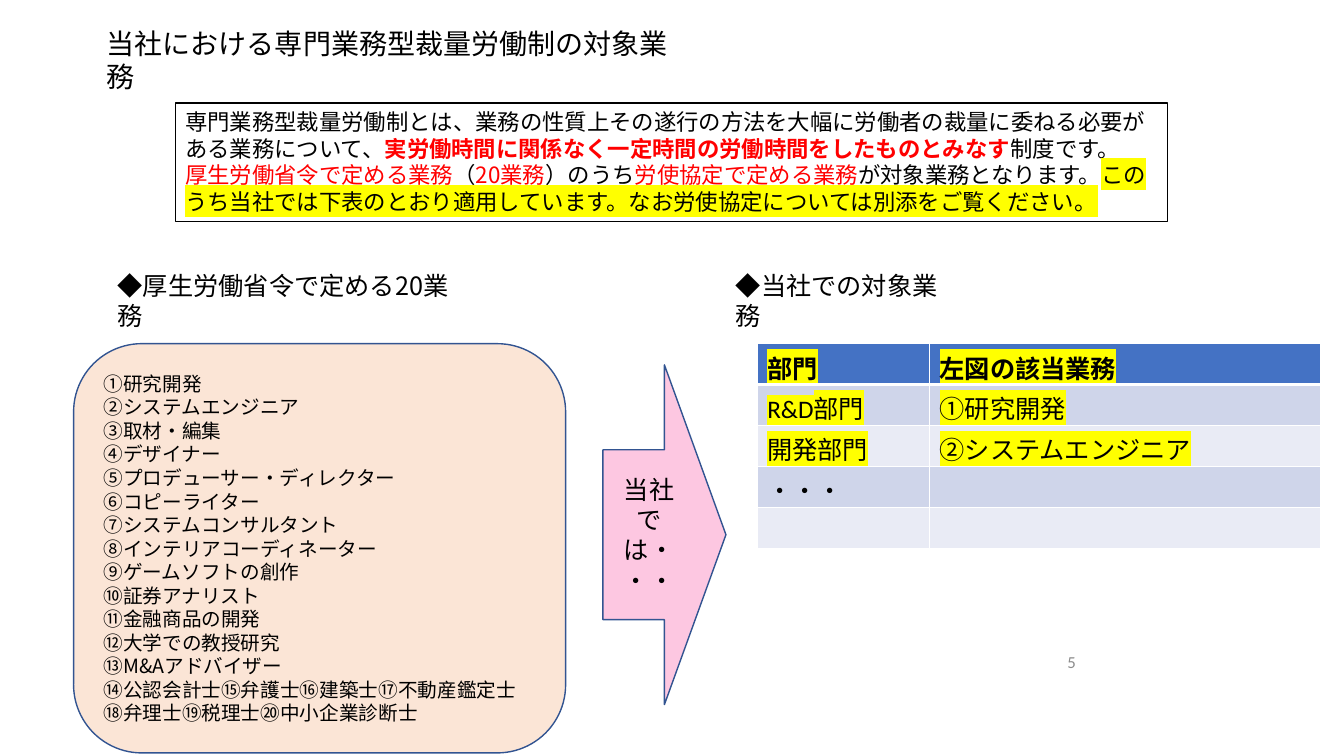
from lxml.etree import SubElement
from pptx import Presentation
from pptx.dml.color import RGBColor
from pptx.enum.shapes import MSO_SHAPE
from pptx.enum.text import MSO_ANCHOR, PP_ALIGN
from pptx.oxml.ns import qn
from pptx.util import Pt

PX = 9144
NOTO = "Noto Sans CJK JP"
CALIBRI = "Calibri"
BLACK = RGBColor(0, 0, 0)
RED = RGBColor(255, 0, 0)
GRAY = RGBColor(0x8C, 0x8C, 0x8C)
WHITE = RGBColor(255, 255, 255)
YELLOW = RGBColor(255, 255, 0)
NAVY = RGBColor(0x32, 0x54, 0x91)
PEACH = RGBColor(0xFB, 0xE5, 0xD6)
PINK = RGBColor(0xFD, 0xC7, 0xE1)
BLUE = RGBColor(0x44, 0x72, 0xC4)
BANDS = RGBColor(0xCF, 0xD5, 0xEA), RGBColor(0xE9, 0xEB, 0xF5)

JOBS = [
    "①研究開発", "②システムエンジニア", "③取材・編集", "④デザイナー",
    "⑤プロデューサー・ディレクター", "⑥コピーライター",
    "⑦システムコンサルタント", "⑧インテリアコーディネーター",
    "⑨ゲームソフトの創作", "⑩証券アナリスト", "⑪金融商品の開発",
    "⑫大学での教授研究", "⑬M&Aアドバイザー",
    "⑭公認会計士⑮弁護士⑯建築士⑰不動産鑑定士⑱弁理士⑲税理士⑳中小企業診断士",
]
HOT = {"color": RED}
MARK = {"mark": YELLOW}
INTRO = [
    [("専門業務型裁量労働制とは、業務の性質上その遂行の方法を大幅に労働者の裁量に委ねる必要がある業務について、", {}),
     ("実労働時間に関係なく一定時間の労働時間をしたものとみなす", {"color": RED, "bold": True}),
     ("制度です。", {})],
    [("厚生労働省令で定める業務", HOT), ("（", {}), ("20業務", HOT),
     ("）のうち", {}), ("労使協定で定める業務", HOT),
     ("が対象業務となります。", {}),
     ("このうち当社では下表のとおり適用しています。なお労使協定については別添をご覧ください。", MARK)],
]
ROWS = [
    ("部門", "左図の該当業務"),
    ("R&D部門", "①研究開発"),
    ("開発部門", "②システムエンジニア"),
    ("・・・", ""),
    ("", ""),
]


def scale(*box):
    return [n * PX for n in box]


def write(para, text, size=16, font=NOTO, color=BLACK, bold=False, mark=None):
    run = para.add_run()
    run.text = text
    run.font.size = Pt(size)
    run.font.bold = bold
    run.font.color.rgb = color
    props = run.font._element
    if mark:
        light = SubElement(props, qn("a:highlight"))
        SubElement(light, qn("a:srgbClr"), val=str(mark))
    run.font.name = font
    SubElement(props, qn("a:ea"), typeface=NOTO)


def fill_text(frame, paras, align=PP_ALIGN.LEFT, anchor=MSO_ANCHOR.TOP, **style):
    frame.word_wrap = True
    frame.vertical_anchor = anchor
    for i, runs in enumerate(paras):
        para = frame.add_paragraph() if i else frame.paragraphs[0]
        para.alignment = align
        for text, extra in runs:
            write(para, text, **{**style, **extra})


def label(slide, box, text, **style):
    area = slide.shapes.add_textbox(*scale(*box))
    fill_text(area.text_frame, [[(text, {})]], **style)


def panel(slide, kind, box, paras, fill=None, line=NAVY, **style):
    shape = slide.shapes.add_shape(kind, *scale(*box))
    shape.shadow.inherit = False
    if fill:
        shape.fill.solid()
        shape.fill.fore_color.rgb = fill
    else:
        shape.fill.background()
    shape.line.color.rgb = line
    shape.line.width = Pt(1)
    fill_text(shape.text_frame, paras, **style)


def border(cell, side, width):
    props = cell._tc.get_or_add_tcPr()
    line = SubElement(props, qn("a:ln" + side), w=str(Pt(width)))
    solid = SubElement(line, qn("a:solidFill"))
    SubElement(solid, qn("a:srgbClr"), val=str(WHITE))


def grid(slide, box, widths, rows):
    table = slide.shapes.add_table(len(rows), len(widths), *scale(*box)).table
    for col, width in zip(table.columns, widths):
        col.width = width * PX
    for r, row in enumerate(rows):
        for c, text in enumerate(row):
            cell = table.cell(r, c)
            for side in "LRTB":
                thick = (r, side) in ((0, "B"), (1, "T"))
                border(cell, side, 3 if thick else 1)
            cell.fill.solid()
            cell.fill.fore_color.rgb = BANDS[(r - 1) % 2] if r else BLUE
            if text:
                write(cell.text_frame.paragraphs[0], text, size=18,
                      font=CALIBRI, bold=r == 0,
                      mark=YELLOW if r < 3 else None)


def main():
    deck = Presentation()
    deck.slide_width, deck.slide_height = scale(1333, 750)
    slide = deck.slides.add_slide(deck.slide_layouts[6])
    label(slide, (969, 637, 108, 40), "5", size=12, font=CALIBRI, color=GRAY,
          align=PP_ALIGN.RIGHT, anchor=MSO_ANCHOR.MIDDLE)
    label(slide, (96, 21, 581, 44), "当社における専門業務型裁量労働制の対象業務", size=20)
    label(slide, (107, 263, 364, 40), "◆厚生労働省令で定める20業務", size=18)
    panel(slide, MSO_SHAPE.ROUNDED_RECTANGLE, (73, 341, 488, 406),
          [[(job, {})] for job in JOBS], fill=PEACH, size=14,
          anchor=MSO_ANCHOR.MIDDLE)
    panel(slide, MSO_SHAPE.RECTANGLE, (174, 102, 984, 118), INTRO, line=BLACK)
    panel(slide, MSO_SHAPE.RIGHT_ARROW, (598, 362, 122, 337),
          [[("当社では・・・", {})]], fill=PINK, size=18,
          align=PP_ALIGN.CENTER, anchor=MSO_ANCHOR.MIDDLE)
    grid(slide, (751, 341, 559, 203), (171, 388), ROWS)
    label(slide, (720, 263, 238, 40), "◆当社での対象業務", size=18)
    deck.save("out.pptx")


if __name__ == "__main__":
    main()
